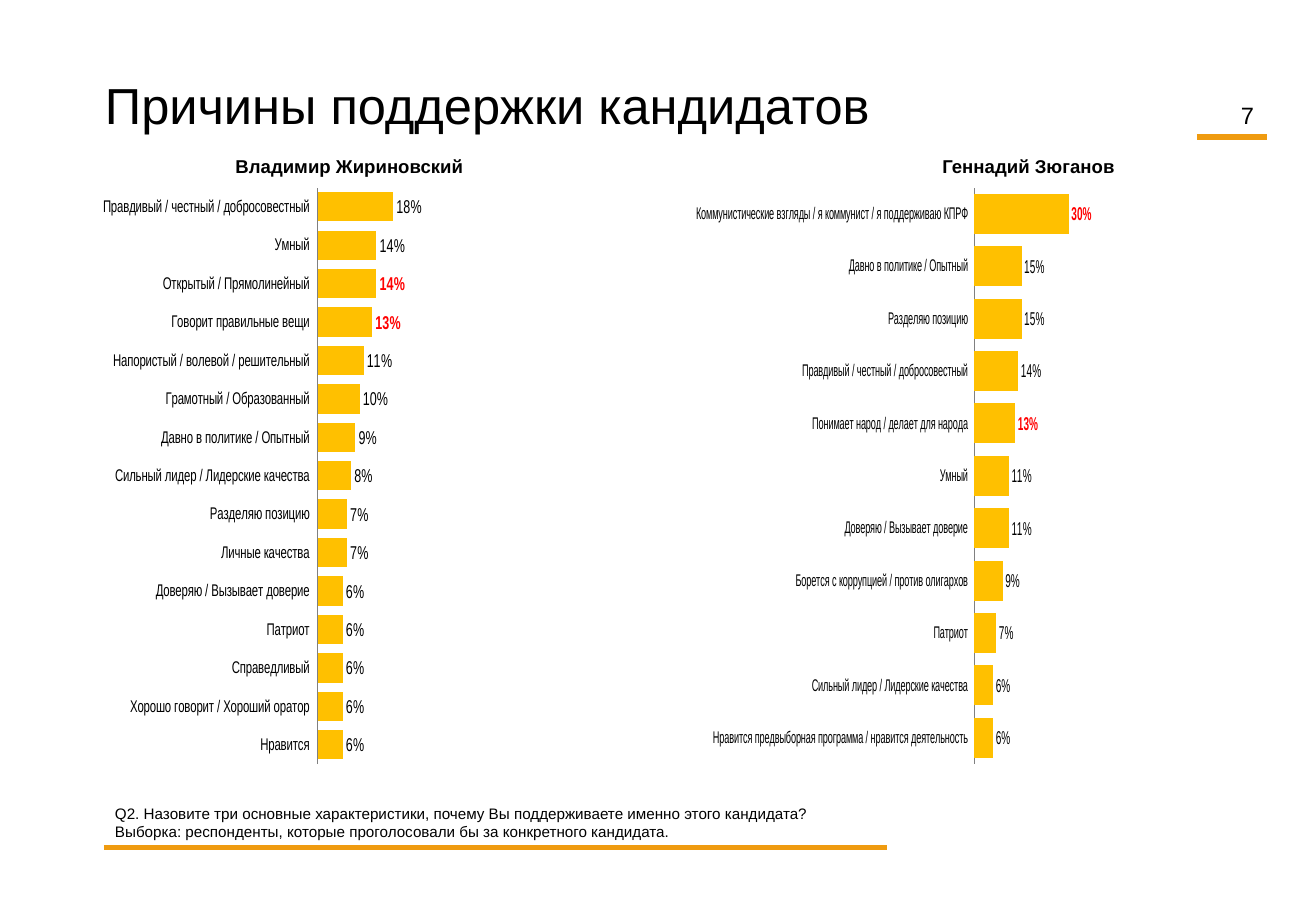
import dataclasses

import lxml.etree
import pptx
import pptx.chart.data
import pptx.dml.color
import pptx.enum.chart
import pptx.enum.shapes
import pptx.enum.text
import pptx.oxml
import pptx.oxml.ns
import pptx.util

EMU_PER_PX = 914400 / 121.5
ALIGN = pptx.enum.text.PP_ALIGN
ANCHOR = pptx.enum.text.MSO_ANCHOR
CHART = pptx.enum.chart


def px(n):
    return pptx.util.Emu(round(n * EMU_PER_PX))


def rgb(value):
    return pptx.dml.color.RGBColor.from_string(value)


@dataclasses.dataclass(frozen=True)
class Theme:
    font: str = "Arial"
    text: str = "000000"
    accent: str = "FF0000"
    bar: str = "FFC000"
    rule: str = "EF9B10"
    axis: str = "808080"
    title: int = 30
    number: int = 14
    heading: int = 11
    label: int = 11
    category: int = 10
    note: int = 9
    rule_width: int = 3


class Deck:
    def __init__(self, theme, width, height):
        self.theme = theme
        self.prs = pptx.Presentation()
        self.prs.slide_width = px(width)
        self.prs.slide_height = px(height)
        self.s = self.prs.slides.add_slide(self.prs.slide_layouts[6])

    def style(self, font, size, color=None, bold=False):
        font.name = self.theme.font
        font.size = pptx.util.Pt(size)
        font.bold = bold
        font.color.rgb = rgb(color or self.theme.text)

    def text(self, box, lines, size, align=ALIGN.LEFT, anchor=ANCHOR.TOP,
             bold=False, left=0, right=12):
        sp = self.s.shapes.add_textbox(*map(px, box))
        tf = sp.text_frame
        tf.word_wrap = True
        tf.vertical_anchor = anchor
        tf.margin_left, tf.margin_right = px(left), px(right)
        tf.margin_top = tf.margin_bottom = px(6)
        for i, line in enumerate(lines):
            p = tf.add_paragraph() if i else tf.paragraphs[0]
            p.alignment = align
            r = p.add_run()
            r.text = line
            self.style(r.font, size, bold=bold)

    def rule(self, x1, x2, y):
        line = self.s.shapes.add_connector(
            pptx.enum.shapes.MSO_CONNECTOR.STRAIGHT, px(x1), px(y), px(x2), px(y))
        line.line.color.rgb = rgb(self.theme.rule)
        line.line.width = pptx.util.Pt(self.theme.rule_width)
        lxml.etree.SubElement(line._element.spPr, pptx.oxml.ns.qn("a:effectLst"))

    def bar_chart(self, box, rows, highlights, plot):
        data = pptx.chart.data.CategoryChartData(number_format="0%")
        data.categories = [name for name, _ in rows]
        data.add_series("Доля", [percent / 100 for _, percent in rows])
        chart = self.s.shapes.add_chart(
            CHART.XL_CHART_TYPE.BAR_CLUSTERED, *map(px, box), data).chart
        chart.has_legend = False
        chart.has_title = False
        self.style(chart.font, self.theme.label)
        self.place_plot(chart, plot)

        cat = chart.category_axis
        cat.reverse_order = True
        cat.major_tick_mark = CHART.XL_TICK_MARK.NONE
        cat.tick_label_position = CHART.XL_TICK_LABEL_POSITION.LOW
        cat.format.line.color.rgb = rgb(self.theme.axis)
        self.style(cat.tick_labels.font, self.theme.category)
        val = chart.value_axis
        val.minimum_scale, val.maximum_scale, val.major_unit = 0, 1, 0.5
        val.has_major_gridlines = False
        val.visible = False

        bars = chart.plots[0]
        bars.gap_width = 31
        bars.vary_by_categories = False
        series = bars.series[0]
        series.format.fill.solid()
        series.format.fill.fore_color.rgb = rgb(self.theme.bar)
        labels = series.data_labels
        labels.show_value = True
        labels.number_format = "0%"
        labels.number_format_is_linked = False
        labels.position = CHART.XL_LABEL_POSITION.OUTSIDE_END
        self.style(labels.font, self.theme.label)
        for i in highlights:
            label = series.points[i].data_label
            self.style(label.font, self.theme.label, self.theme.accent, bold=True)
            label.position = CHART.XL_LABEL_POSITION.OUTSIDE_END

    def place_plot(self, chart, plot):
        area = chart._chartSpace.chart.plotArea
        for old in area.findall(pptx.oxml.ns.qn("c:layout")):
            area.remove(old)
        sizes = "".join(f'<c:{k} val="{v}"/>' for k, v in zip("xywh", plot))
        area.insert(0, pptx.oxml.parse_xml(
            f'<c:layout {pptx.oxml.ns.nsdecls("c")}><c:manualLayout>'
            '<c:layoutTarget val="inner"/><c:xMode val="edge"/><c:yMode val="edge"/>'
            f'{sizes}</c:manualLayout></c:layout>'))


ZYUGANOV = [
    ("Коммунистические взгляды / я коммунист / я поддерживаю КПРФ", 30),
    ("Давно в политике / Опытный", 15),
    ("Разделяю позицию", 15),
    ("Правдивый / честный / добросовестный", 14),
    ("Понимает народ / делает для народа", 13),
    ("Умный", 11),
    ("Доверяю / Вызывает доверие", 11),
    ("Борется с коррупцией / против олигархов", 9),
    ("Патриот", 7),
    ("Сильный лидер / Лидерские качества", 6),
    ("Нравится предвыборная программа / нравится деятельность", 6),
]
ZHIRINOVSKY = [
    ("Правдивый / честный / добросовестный", 18),
    ("Умный", 14),
    ("Открытый / Прямолинейный", 14),
    ("Говорит правильные вещи", 13),
    ("Напористый / волевой / решительный", 11),
    ("Грамотный / Образованный", 10),
    ("Давно в политике / Опытный", 9),
    ("Сильный лидер / Лидерские качества", 8),
    ("Разделяю позицию", 7),
    ("Личные качества", 7),
    ("Доверяю / Вызывает доверие", 6),
    ("Патриот", 6),
    ("Справедливый", 6),
    ("Хорошо говорит / Хороший оратор", 6),
    ("Нравится", 6),
]
NOTE = [
    "Q2. Назовите три основные характеристики, почему Вы поддерживаете именно этого кандидата?",
    "Выборка: респонденты, которые проголосовали бы за конкретного кандидата.",
]


def main():
    theme = Theme()
    deck = Deck(theme, 1316, 911)
    deck.rule(104, 887, 848)
    deck.rule(1197, 1267, 137)
    deck.text((1196, 95, 70, 35), ["7"], theme.number, ALIGN.RIGHT, left=12)
    deck.text((105, 67, 1091, 74), ["Причины поддержки кандидатов"], theme.title,
              anchor=ANCHOR.BOTTOM, right=0)
    candidates = [
        ("Геннадий Зюганов", (916, 149, 237, 29), (696, 187, 593, 583),
         ZYUGANOV, (0, 4), 0.02),
        ("Владимир Жириновский", (217, 149, 277, 29), (103, 187, 634, 583),
         ZHIRINOVSKY, (2, 3), 0.51),
    ]
    for name, heading, box, rows, highlights, plot_x in candidates:
        deck.bar_chart(box, rows, highlights, (plot_x, 0, 0.98, 0.99))
        deck.text(heading, [name], theme.heading, ALIGN.CENTER, bold=True)
    deck.text((103, 798, 1168, 49), NOTE, theme.note, left=12)
    deck.prs.save("out.pptx")


if __name__ == "__main__":
    main()
